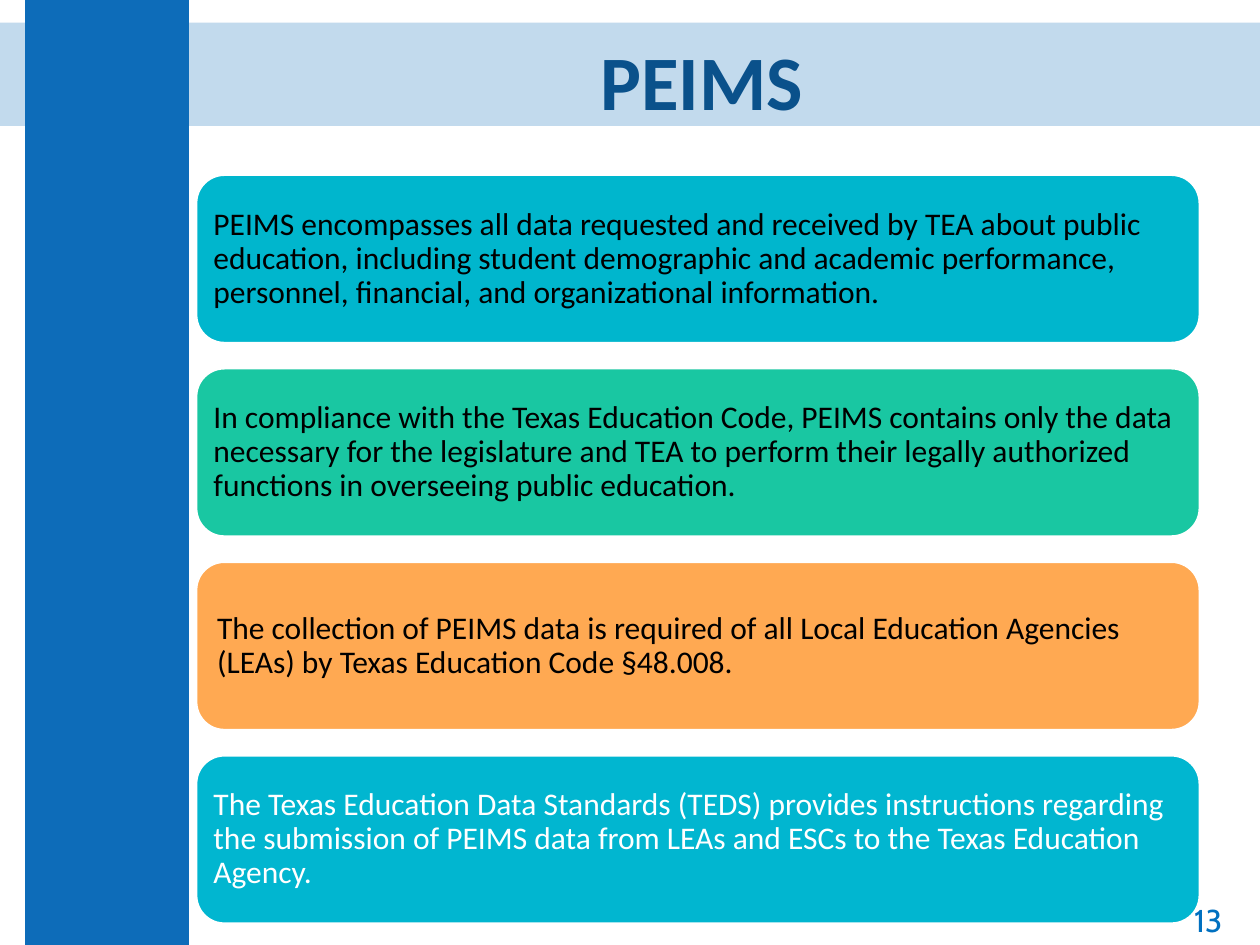
from lxml import etree
from pptx import Presentation
from pptx.dml.color import RGBColor
from pptx.enum.shapes import MSO_SHAPE
from pptx.enum.text import MSO_ANCHOR, PP_ALIGN
from pptx.oxml.ns import qn
from pptx.util import Inches, Pt

RECTANGLE = MSO_SHAPE.RECTANGLE
ROUNDED = MSO_SHAPE.ROUNDED_RECTANGLE
MIDDLE = MSO_ANCHOR.MIDDLE
LEFT, CENTER, RIGHT = PP_ALIGN.LEFT, PP_ALIGN.CENTER, PP_ALIGN.RIGHT

BLUE = RGBColor(0x0D, 0x6C, 0xB9)
TITLE_BLUE = RGBColor(0x0A, 0x51, 0x8B)
NUMBER_BLUE = RGBColor(0x00, 0x70, 0xC0)
CYAN = RGBColor(0x00, 0xB6, 0xCD)
GREEN = RGBColor(0x19, 0xC7, 0xA2)
ORANGE = RGBColor(0xFF, 0xA9, 0x52)
TURQUOISE = RGBColor(0x01, 0xB6, 0xD0)
BLACK = RGBColor(0x00, 0x00, 0x00)
WHITE = RGBColor(0xFF, 0xFF, 0xFF)

CARD_TOP = 1.39
CARD_PITCH = 1.536
CARDS = [
    (CYAN, BLACK, 0.07,
     "PEIMS encompasses all data requested and received by TEA about public "
     "education, including student demographic and academic performance, "
     "personnel, financial, and organizational information."),
    (GREEN, BLACK, 0.07,
     "In compliance with the Texas Education Code, PEIMS contains only the data "
     "necessary for the legislature and TEA to perform their legally authorized "
     "functions in overseeing public education."),
    (ORANGE, BLACK, 0.1,
     "The collection of PEIMS data is required of all Local Education Agencies "
     "(LEAs) by Texas Education Code §48.008."),
    (TURQUOISE, WHITE, 0.07,
     "The Texas Education Data Standards (TEDS) provides instructions regarding "
     "the submission of PEIMS data from LEAs and ESCs to the Texas Education "
     "Agency."),
]


def add_block(preset, left, top, width, height, color):
    block = slide.shapes.add_shape(
        preset, Inches(left), Inches(top), Inches(width), Inches(height))
    block.shadow.inherit = False
    block.fill.solid()
    block.fill.fore_color.rgb = color
    block.line.fill.background()
    return block


def write_text(box, text, size, color, align, font_name="Calibri", bold=False):
    frame = box.text_frame
    frame.word_wrap = True
    frame.vertical_anchor = MIDDLE
    frame.text = text
    para = frame.paragraphs[0]
    para.alignment = align
    para.line_spacing = 0.9
    span = para.runs[0]
    span.font.name = font_name
    span.font.size = Pt(size)
    span.font.bold = bold
    span.font.color.rgb = color


deck = Presentation()
deck.slide_width = Inches(10)
deck.slide_height = Inches(7.5)
slide = deck.slides.add_slide(deck.slide_layouts[6])

band = add_block(RECTANGLE, 0, 0.18, 10, 0.82, BLUE)
band_color = band.fill._xPr.find(qn("a:solidFill"))[0]
etree.SubElement(band_color, qn("a:alpha"), val="25000")
add_block(RECTANGLE, 0.2, 0, 1.3, 7.5, BLUE)

number_box = slide.shapes.add_textbox(
    Inches(7.55), Inches(7.1), Inches(2.25), Inches(0.4))
write_text(number_box, "13", 18, NUMBER_BLUE, RIGHT, font_name="Cabin")
number_box.text_frame.paragraphs[0].line_spacing = 1.0

title_box = slide.shapes.add_textbox(
    Inches(1.62), Inches(0.27), Inches(7.9), Inches(0.82))
write_text(title_box, "PEIMS", 44, TITLE_BLUE, CENTER, bold=True)

for index, (fill_color, text_color, inset, text) in enumerate(CARDS):
    card = add_block(ROUNDED, 1.56, CARD_TOP + index * CARD_PITCH, 7.96, 1.33, fill_color)
    card.line.color.rgb = WHITE
    card.line.width = Pt(1)
    frame = card.text_frame
    frame.margin_left = frame.margin_right = Inches(inset)
    frame.margin_top = frame.margin_bottom = Inches(inset)
    write_text(card, text, 18, text_color, LEFT)

deck.save("out.pptx")
